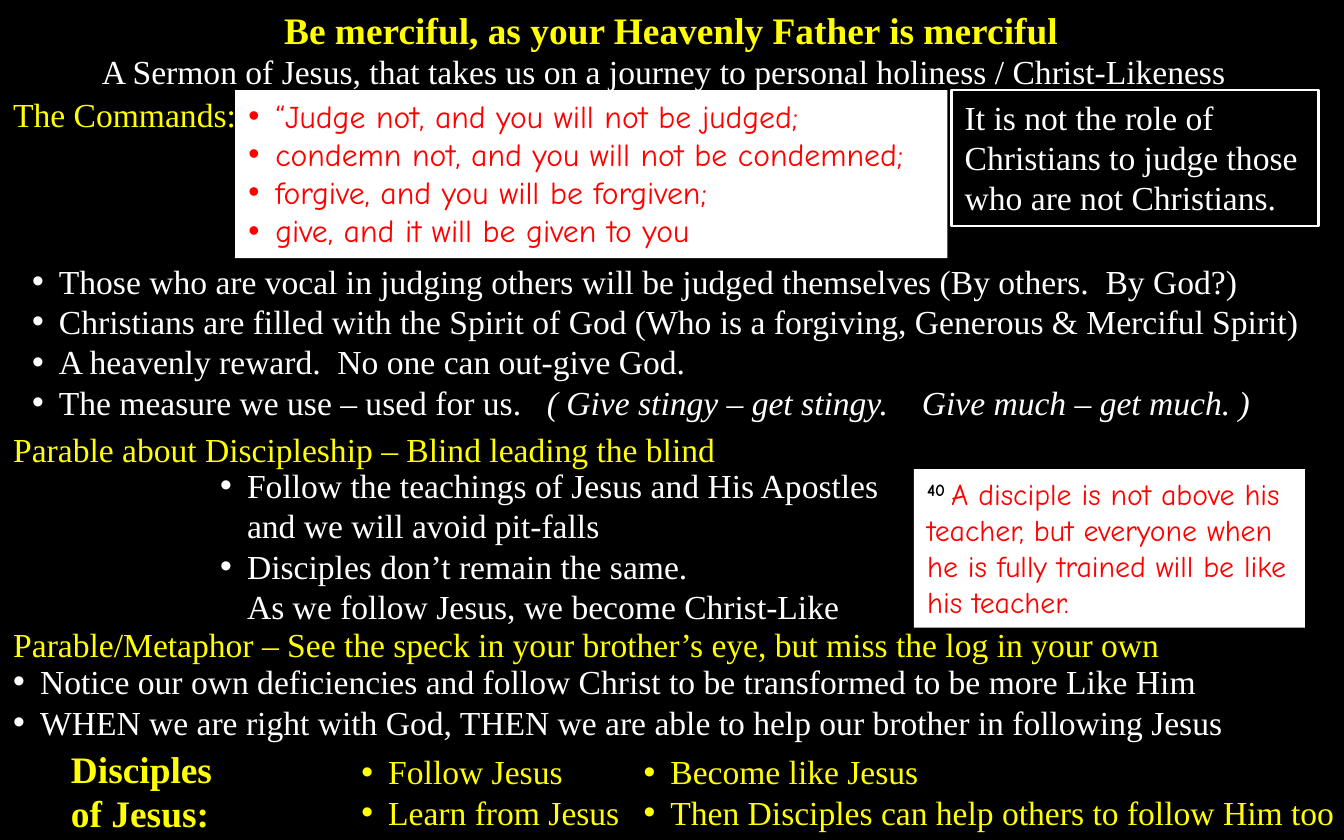
from lxml import etree
from pptx import Presentation
from pptx.dml.color import RGBColor
from pptx.enum.shapes import MSO_SHAPE
from pptx.enum.text import MSO_ANCHOR, MSO_AUTO_SIZE, PP_ALIGN
from pptx.oxml.ns import qn
from pptx.util import Inches, Pt

BLACK = RGBColor(0x00, 0x00, 0x00)
WHITE = RGBColor(0xFF, 0xFF, 0xFF)
YELLOW = RGBColor(0xFF, 0xFF, 0x00)
RED = RGBColor(0xFF, 0x00, 0x00)
SERIF = "Times New Roman"
HANDWRITTEN = "Comic Neue"
RECTANGLE = MSO_SHAPE.RECTANGLE
TOP = MSO_ANCHOR.TOP
GROW = MSO_AUTO_SIZE.SHAPE_TO_FIT_TEXT
LEFT, CENTER = PP_ALIGN.LEFT, PP_ALIGN.CENTER


def write_lines(box, lines, color, size=18, font=SERIF, bold=False, bullets=False, align=LEFT):
    frame = box.text_frame
    frame.word_wrap = True
    frame.auto_size = GROW
    frame.vertical_anchor = TOP
    for index, line in enumerate(lines):
        para = frame.paragraphs[0] if index == 0 else frame.add_paragraph()
        para.text = line
        para.alignment = align
        if bullets:
            properties = para._p.get_or_add_pPr()
            properties.set("marL", str(Inches(0.2)))
            properties.set("indent", str(Inches(-0.2)))
            etree.SubElement(properties, qn("a:buFont"), typeface="Arial")
            etree.SubElement(properties, qn("a:buChar"), char="•")
        para.font.name = font
        para.font.size = Pt(size)
        para.font.bold = bold
        para.font.color.rgb = color


def add_box(place, lines, color, fill=None, **style):
    """Add a text box, or a rectangle when a fill is given, and write its lines."""
    place = [Inches(value) for value in place]
    if fill is None:
        box = slide.shapes.add_textbox(*place)
    else:
        box = slide.shapes.add_shape(RECTANGLE, *place)
        box.shadow.inherit = False
        box.fill.solid()
        box.fill.fore_color.rgb = fill
        box.line.fill.background()
    write_lines(box, lines, color, **style)
    return box


deck = Presentation()
deck.slide_width = Inches(10)
deck.slide_height = Inches(6.25)
slide = deck.slides.add_slide(deck.slide_layouts[5])
slide.background.fill.solid()
slide.background.fill.fore_color.rgb = BLACK

title = slide.shapes.title
title.left, title.top = Inches(0), Inches(0)
title.width, title.height = Inches(9.99), Inches(0.44)
write_lines(title, ["Be merciful, as your Heavenly Father is merciful"], YELLOW,
            size=20, bold=True, align=CENTER)

verse = add_box((6.8, 3.49, 2.91, 1.18), ["40\u00a0".replace("\u00a0", " ")], RED, fill=WHITE,
                size=16, font=HANDWRITTEN)
verse_para = verse.text_frame.paragraphs[0]
verse_number = verse_para.runs[0]
verse_number.font.bold = True
verse_number.font.color.rgb = BLACK
verse_number._r.get_or_add_rPr().set("baseline", "30000")
verse_para.add_run().text = ("A disciple is not above his teacher, but everyone when "
                             "he is fully trained will be like his teacher.")

add_box((0.66, 0.33, 8.74, 0.4),
        ["A Sermon of Jesus, that takes us on a journey to personal holiness / Christ-Likeness"],
        WHITE)

headings = [
    (0.65, 2, "The Commands:"),
    (3.14, 6.57, "Parable about Discipleship – Blind leading the blind"),
    (4.59, 9.79, "Parable/Metaphor – See the speck in your brother’s eye, "
                 "but miss the log in your own"),
]
for top, width, heading in headings:
    add_box((0, top, width, 0.4), [heading], YELLOW)

lessons = add_box((0.14, 1.89, 9.79, 1.31), [
    "Those who are vocal in judging others will be judged themselves (By others.  By God?)",
    "Christians are filled with the Spirit of God (Who is a forgiving, Generous & Merciful Spirit)",
    "A heavenly reward.  No one can out-give God.",
    "The measure we use – used for us.\t",
], WHITE, fill=BLACK, bullets=True)
measure = lessons.text_frame.paragraphs[-1]
saying = measure.add_run()
saying.text = "( Give stingy – get stingy.\tGive much – get much. )"
saying.font.italic = True
tab_list = etree.Element(qn("a:tabLst"))
for position in (3.83, 6.62):
    etree.SubElement(tab_list, qn("a:tab"), pos=str(Inches(position)), algn="l")
measure._p.pPr.find(qn("a:buChar")).addnext(tab_list)

add_box((1.75, 0.67, 5.3, 1.25), [
    "“Judge not, and you will not be judged;",
    "condemn not, and you will not be condemned;",
    "forgive, and you will be forgiven;",
    "give, and it will be given to you",
], RED, fill=WHITE, size=17, font=HANDWRITTEN, bullets=True)

role = add_box((7.08, 0.67, 2.73, 1.01),
               ["It is not the role of Christians to judge those who are not Christians."],
               WHITE, fill=BLACK)
role.line.color.rgb = WHITE
role.line.width = Pt(1.25)

add_box((1.54, 3.41, 5.54, 1.31), [
    "Follow the teachings of Jesus and His Apostles\vand we will avoid pit-falls",
    "Disciples don’t remain the same.\vAs we follow Jesus, we become Christ-Like",
], WHITE, bullets=True)

add_box((0, 4.87, 9.99, 0.71), [
    "Notice our own deficiencies and follow Christ to be transformed to be more Like Him",
    "WHEN we are right with God, THEN we are able to help our brother in following Jesus",
], WHITE, bullets=True)

add_box((0.43, 5.5, 1.74, 0.77), ["Disciples", "of Jesus:"], YELLOW, size=20, bold=True)
add_box((2.59, 5.54, 2.31, 0.71), ["Follow Jesus", "Learn from Jesus"], YELLOW, bullets=True)
add_box((4.69, 5.54, 5.43, 0.71),
        ["Become like Jesus", "Then Disciples can help others to follow Him too"],
        YELLOW, bullets=True)

deck.save("out.pptx")
